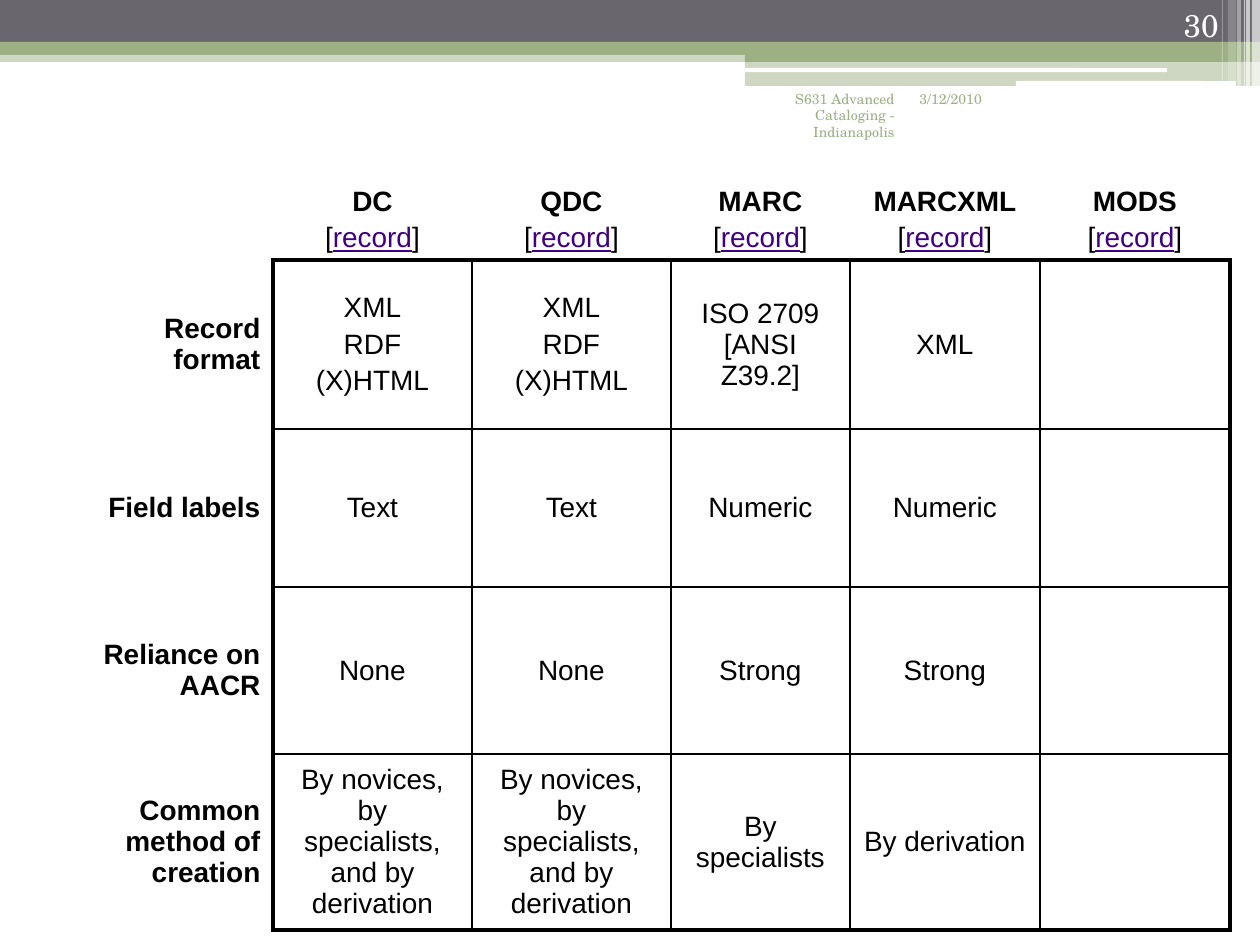
"""Build the metadata format comparison slide with its banded header and table."""
from lxml.etree import SubElement
from pptx import Presentation
from pptx.dml.color import RGBColor
from pptx.enum.shapes import MSO_SHAPE
from pptx.enum.text import MSO_ANCHOR, PP_ALIGN
from pptx.oxml import parse_xml
from pptx.oxml.ns import nsdecls, qn
from pptx.util import Emu, Pt

PX = 914400 // 126
BLACK = RGBColor(0x00, 0x00, 0x00)
WHITE = RGBColor(0xFF, 0xFF, 0xFF)
GREY = RGBColor(0x69, 0x67, 0x6D)
GREEN = RGBColor(0x9C, 0xB0, 0x84)
PURPLE = RGBColor(0x41, 0x00, 0x82)

RECT, ROUND = MSO_SHAPE.RECTANGLE, MSO_SHAPE.ROUNDED_RECTANGLE
BANDS = [
    (RECT, (0, 50, 1260, 12), GREEN, 50),
    (RECT, (0, 0, 1260, 42), GREY, 100),
    (RECT, (0, 42, 1260, 13), GREEN, 100),
    (RECT, (745, 49, 515, 13), GREEN, 100),
    (RECT, (745, 61, 515, 25), GREEN, 50),
    (ROUND, (745, 68, 422, 4), WHITE, 100),
    (ROUND, (1016, 81, 220, 5), WHITE, 100),
]
STRIPES = [(1252, 8, 86, 65), (1246, 4, 86, 65), (1244, 1, 86, 60),
           (1237, 4, 86, 40), (1228, 8, 81, 20), (1222, 1, 81, 30)]
BANDS += [(RECT, (left, 0, width, height), WHITE, alpha)
          for left, width, height, alpha in STRIPES]

SERIF = "TeX Gyre Schola"
LABELS = [
    ("3/12/2010", (907, 84, 132, 63), 8, GREEN, PP_ALIGN.LEFT, MSO_ANCHOR.TOP),
    ("30", (1126, 0, 105, 50), 18, WHITE, PP_ALIGN.RIGHT, MSO_ANCHOR.BOTTOM),
    ("S631 Advanced Cataloging - Indianapolis", (725, 84, 182, 63), 8, GREEN,
     PP_ALIGN.RIGHT, MSO_ANCHOR.TOP),
]

FORMATS = ["DC", "QDC", "MARC", "MARCXML", "MODS"]
MARKUP = ["XML", "RDF", "(X)HTML"]
NOVICES = ["By novices, by specialists, and by derivation"]
ROWS = [
    ("Record format", [MARKUP, MARKUP, ["ISO 2709 [ANSI Z39.2]"], ["XML"], []]),
    ("Field labels", [["Text"], ["Text"], ["Numeric"], ["Numeric"], []]),
    ("Reliance on AACR", [["None"], ["None"], ["Strong"], ["Strong"], []]),
    ("Common method of creation",
     [NOVICES, NOVICES, ["By specialists"], ["By derivation"], []]),
]
TABLE_LEFT, TABLE_TOP = 84, 132
COLUMN_WIDTHS = [189, 199, 199, 179, 190, 190]
ROW_HEIGHTS = [128, 169, 158, 167, 176]
THICK, THIN = 2.25, 1

BODY = {"name": "Arial", "size": Pt(16), "bold": False}
BOLD = BODY | {"bold": True}
LINK = BODY | {"underline": True}


def scale(*lengths):
    return [Emu(length * PX) for length in lengths]


def add_span(para, text, font, color):
    span = para.add_run()
    span.text = text
    for name, value in font.items():
        setattr(span.font, name, value)
    span.font.color.rgb = color


def add_band(page, kind, place, color, alpha):
    band = page.shapes.add_shape(kind, *scale(*place))
    band.shadow.inherit = False
    band.fill.solid()
    band.fill.fore_color.rgb = color
    band.line.fill.background()
    if alpha < 100:
        tint = band.fill._xPr.find(qn("a:solidFill"))[0]
        SubElement(tint, qn("a:alpha"), val=str(alpha * 1000))


def add_label(page, text, place, size, color, align, anchor):
    frame = page.shapes.add_textbox(*scale(*place)).text_frame
    frame.word_wrap = True
    frame.vertical_anchor = anchor
    para = frame.paragraphs[0]
    para.alignment = align
    add_span(para, text, {"name": SERIF, "size": Pt(size)}, color)


def fill_cell(cell, paragraphs, align, anchor):
    cell.vertical_anchor = anchor
    frame = cell.text_frame
    for index, spans in enumerate(paragraphs):
        para = frame.add_paragraph() if index else frame.paragraphs[0]
        para.alignment = align
        para.space_before = Pt(3.2)
        for span in spans:
            add_span(para, *span)


def line_weight(across, along, last):
    if across == 0 or along == 0:
        return 0
    return THICK if across in (1, last) else THIN


def set_borders(cell, row, column):
    row_count, column_count = len(ROW_HEIGHTS), len(COLUMN_WIDTHS)
    weights = {
        "lnL": line_weight(column, row, column_count),
        "lnR": line_weight(column + 1, row, column_count),
        "lnT": line_weight(row, column, row_count),
        "lnB": line_weight(row + 1, column, row_count),
    }
    properties = cell._tc.get_or_add_tcPr()
    for index, (side, weight) in enumerate(weights.items()):
        paint = (f'<a:solidFill><a:srgbClr val="{BLACK}"/></a:solidFill>'
                 if weight else "<a:noFill/>")
        properties.insert(index, parse_xml(
            f'<a:{side} {nsdecls("a")} w="{Pt(weight)}">{paint}</a:{side}>'))


def add_comparison(page):
    place = scale(TABLE_LEFT, TABLE_TOP, sum(COLUMN_WIDTHS), sum(ROW_HEIGHTS))
    table = page.shapes.add_table(
        len(ROW_HEIGHTS), len(COLUMN_WIDTHS), *place).table
    table.horz_banding = table.first_row = False
    for column, width in zip(table.columns, scale(*COLUMN_WIDTHS)):
        column.width = width
    for row, height in zip(table.rows, scale(*ROW_HEIGHTS)):
        row.height = height
    for row in range(len(ROW_HEIGHTS)):
        for column in range(len(COLUMN_WIDTHS)):
            cell = table.cell(row, column)
            cell.fill.solid()
            cell.fill.fore_color.rgb = WHITE
            set_borders(cell, row, column)
    record = [("[", BODY, BLACK), ("record", LINK, PURPLE), ("]", BODY, BLACK)]
    for column, name in enumerate(FORMATS, 1):
        fill_cell(table.cell(0, column), [[(name, BOLD, BLACK)], record],
                  PP_ALIGN.CENTER, MSO_ANCHOR.BOTTOM)
    for row, (heading, values) in enumerate(ROWS, 1):
        fill_cell(table.cell(row, 0), [[(heading, BOLD, BLACK)]],
                  PP_ALIGN.RIGHT, MSO_ANCHOR.MIDDLE)
        for column, lines in enumerate(values, 1):
            fill_cell(table.cell(row, column),
                      [[(line, BODY, BLACK)] for line in lines],
                      PP_ALIGN.CENTER, MSO_ANCHOR.MIDDLE)


def main():
    deck = Presentation()
    deck.slide_width, deck.slide_height = scale(1260, 945)
    page = deck.slides.add_slide(deck.slide_layouts[6])
    for band in BANDS:
        add_band(page, *band)
    add_comparison(page)
    for label in LABELS:
        add_label(page, *label)
    deck.save("out.pptx")


if __name__ == "__main__":
    main()
